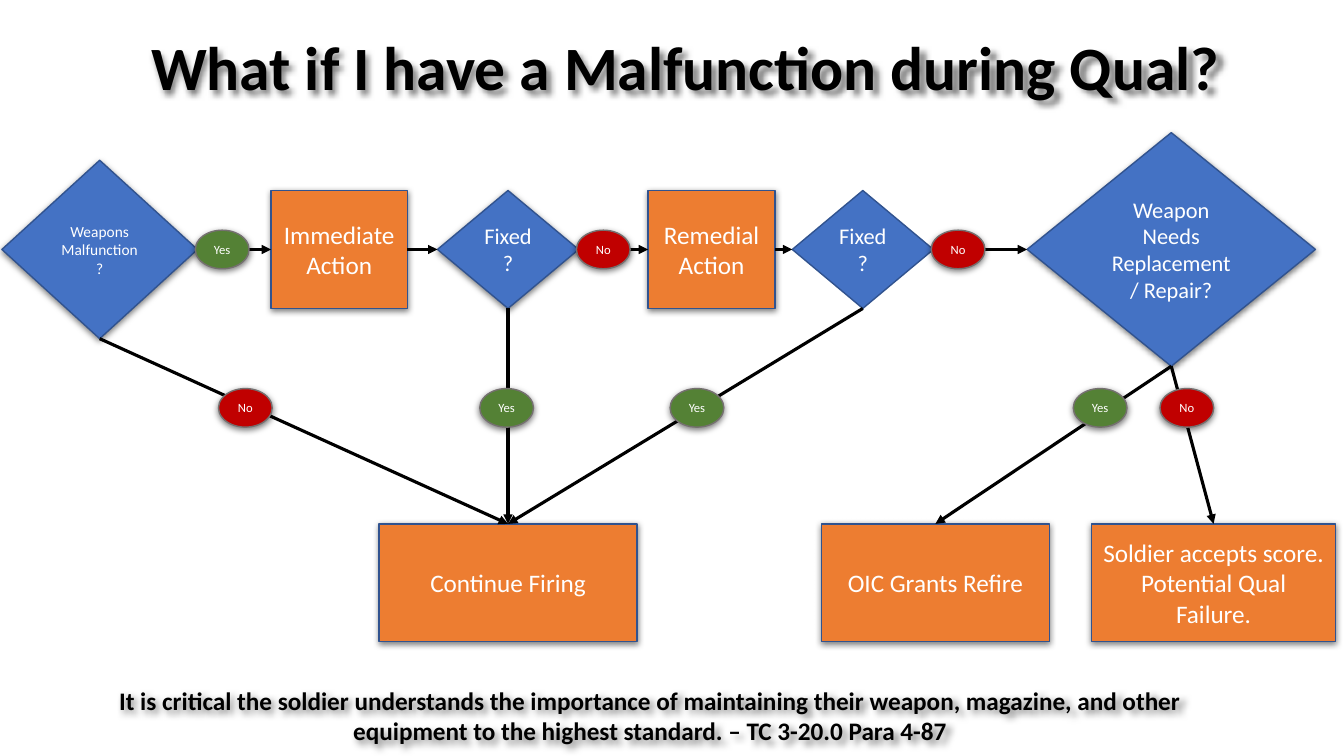
from dataclasses import dataclass
from lxml.etree import SubElement
from pptx import Presentation
from pptx.dml.color import RGBColor
from pptx.enum.shapes import MSO_CONNECTOR as Link, MSO_SHAPE as Shape
from pptx.enum.text import MSO_ANCHOR as Anchor, PP_ALIGN as Align
from pptx.oxml.ns import qn
from pptx.util import Inches, Pt

# Content: places and sizes are percentages of the slide
TITLE = "What if I have a Malfunction during Qual?"
REMINDER = ("It is critical the soldier understands the importance of maintaining "
            "their weapon, magazine, and other equipment to the highest standard. "
            "– TC 3-20.0 Para 4-87")
CHAIN, ANSWERS, OUTCOMES = 33, 53.95, 77.1      # row centres
STEP_H = 15.6

# key: kind, text, centre x, row, width, height, type size, shadow
STEPS = {
    "malfunction": ("question", "Weapons Malfunction?", 7.42, CHAIN, 14.55, 23.6, 11, True),
    "immediate": ("action", "Immediate Action", 25.24, CHAIN, 10.13, STEP_H, 18, True),
    "fixed once": ("question", "Fixed?", 37.8, CHAIN, 10.5, STEP_H, 16, True),
    "remedial": ("action", "Remedial Action", 52.95, CHAIN, 9.45, STEP_H, 18, True),
    "fixed twice": ("question", "Fixed?", 64.2, CHAIN, 10.5, STEP_H, 16, False),
    "repair": ("question", "Weapon Needs Replacement/ Repair?",
               87.15, CHAIN, 21.45, 30.9, 16, True),
    "continue": ("action", "Continue Firing", 37.8, OUTCOMES, 19.2, STEP_H, 18, True),
    "refire": ("action", "OIC Grants Refire", 69.6, OUTCOMES, 16.95, STEP_H, 18, True),
    "accept": ("action", "Soldier accepts score. Potential Qual Failure.",
               90.3, OUTCOMES, 18.15, STEP_H, 18, True),
}
# from, to, answer, answer's centre x when the path leads down
PATHS = [
    ("malfunction", "immediate", "Yes", None),
    ("immediate", "fixed once", None, None),
    ("fixed once", "remedial", "No", None),
    ("remedial", "fixed twice", None, None),
    ("fixed twice", "repair", "No", None),
    ("malfunction", "continue", "No", 18.26),
    ("fixed once", "continue", "Yes", 37.7),
    ("fixed twice", "continue", "Yes", 51.86),
    ("repair", "refire", "Yes", 81.86),
    ("repair", "accept", "No", 88.31),
]
ANSWER_W, ANSWER_H, ANSWER_GAP = 4, 5.1, 1.84
TOP, LEFT, BOTTOM, RIGHT = range(4)             # connection sites


@dataclass(frozen=True)
class Theme:
    font: str = "Calibri"
    ink: str = "000000"
    paper: str = "FFFFFF"
    question: str = "4472C4"
    action: str = "ED7D31"
    step_line: str = "31538F"
    yes: str = "548135"
    no: str = "C00000"
    answer_line: str = "757070"
    title_size: int = 44
    reminder_size: int = 18
    answer_size: int = 9
    path_width: float = 2.25


theme = Theme()
KINDS = {
    "question": (Shape.DIAMOND, theme.question, theme.step_line),
    "action": (Shape.RECTANGLE, theme.action, theme.step_line),
    "Yes": (Shape.OVAL, theme.yes, theme.answer_line),
    "No": (Shape.OVAL, theme.no, theme.answer_line),
}

deck = Presentation()
deck.slide_width, deck.slide_height = Inches(13.33), Inches(7.5)
slide = deck.slides.add_slide(deck.slide_layouts[6])


def across(share):
    return round(deck.slide_width * share / 100)


def down(share):
    return round(deck.slide_height * share / 100)


def write(part, text, size, color, bold=False, anchor=Anchor.MIDDLE, spacing=None):
    frame = part.text_frame
    frame.word_wrap, frame.vertical_anchor = True, anchor
    line = frame.paragraphs[0]
    line.alignment = Align.CENTER
    if spacing:
        line.line_spacing = spacing
    run = line.add_run()
    run.text = text
    run.font.name, run.font.size, run.font.bold = theme.font, Pt(size), bold
    run.font.color.rgb = RGBColor.from_string(color)


def add_shadow(part, angle=90, distance=1.5):
    part.shadow.inherit = False
    effects = part._element.spPr.find(qn("a:effectLst"))
    shadow = SubElement(effects, qn("a:outerShdw"), blurRad=str(Pt(4.5)),
                        dist=str(Pt(distance)), dir=str(angle * 60000), rotWithShape="0")
    black = SubElement(shadow, qn("a:srgbClr"), val=theme.ink)
    SubElement(black, qn("a:alpha"), val="50000")


def add_block(kind, text, x, y, width, height, size, shadowed=True):
    preset, fill, outline = KINDS[kind]
    block = slide.shapes.add_shape(preset, across(x - width / 2), down(y - height / 2),
                                   across(width), down(height))
    block.fill.solid()
    block.fill.fore_color.rgb = RGBColor.from_string(fill)
    block.line.color.rgb = RGBColor.from_string(outline)
    block.line.width = Pt(1)
    block.shadow.inherit = False
    if shadowed:
        add_shadow(block)
    write(block, text, size, theme.paper)
    return block


def add_path(start, start_site, end, end_site):
    path = slide.shapes.add_connector(Link.STRAIGHT, 0, 0, 0, 0)
    path.begin_connect(start, start_site)
    path.end_connect(end, end_site)
    path.line.color.rgb = RGBColor.from_string(theme.ink)
    path.line.width = Pt(theme.path_width)
    SubElement(path.line._get_or_add_ln(), qn("a:tailEnd"), type="triangle")
    SubElement(path._element.spPr, qn("a:effectLst"))


def add_caption(text, x, y, width, height, size, **style):
    caption = slide.shapes.add_textbox(across(x), down(y), across(width), down(height))
    write(caption, text, size, theme.ink, bold=True, **style)
    add_shadow(caption, angle=45, distance=3)


# Title, then the steps
add_caption(TITLE, 10.2, -0.27, 81.7, 19.33, theme.title_size, spacing=0.9)
blocks = {key: add_block(*step) for key, step in STEPS.items()}

# Paths: sideways along the chain, downwards to an outcome
for start, end, _, _ in PATHS:
    sideways = STEPS[end][3] == CHAIN
    sites = (RIGHT, LEFT) if sideways else (BOTTOM, TOP)
    add_path(blocks[start], sites[0], blocks[end], sites[1])

# Answers sit just after a question, or on the row between chain and outcomes
for start, _, answer, answer_x in PATHS:
    if answer:
        _, _, x, _, width, *_ = STEPS[start]
        place = (answer_x, ANSWERS) if answer_x else (x + width / 2 + ANSWER_GAP, CHAIN)
        add_block(answer, answer, *place, ANSWER_W, ANSWER_H, theme.answer_size)

# Closing reminder
add_caption(REMINDER, 3.83, 90, 89.1, 9.47, theme.reminder_size, anchor=Anchor.TOP)

deck.save("out.pptx")
